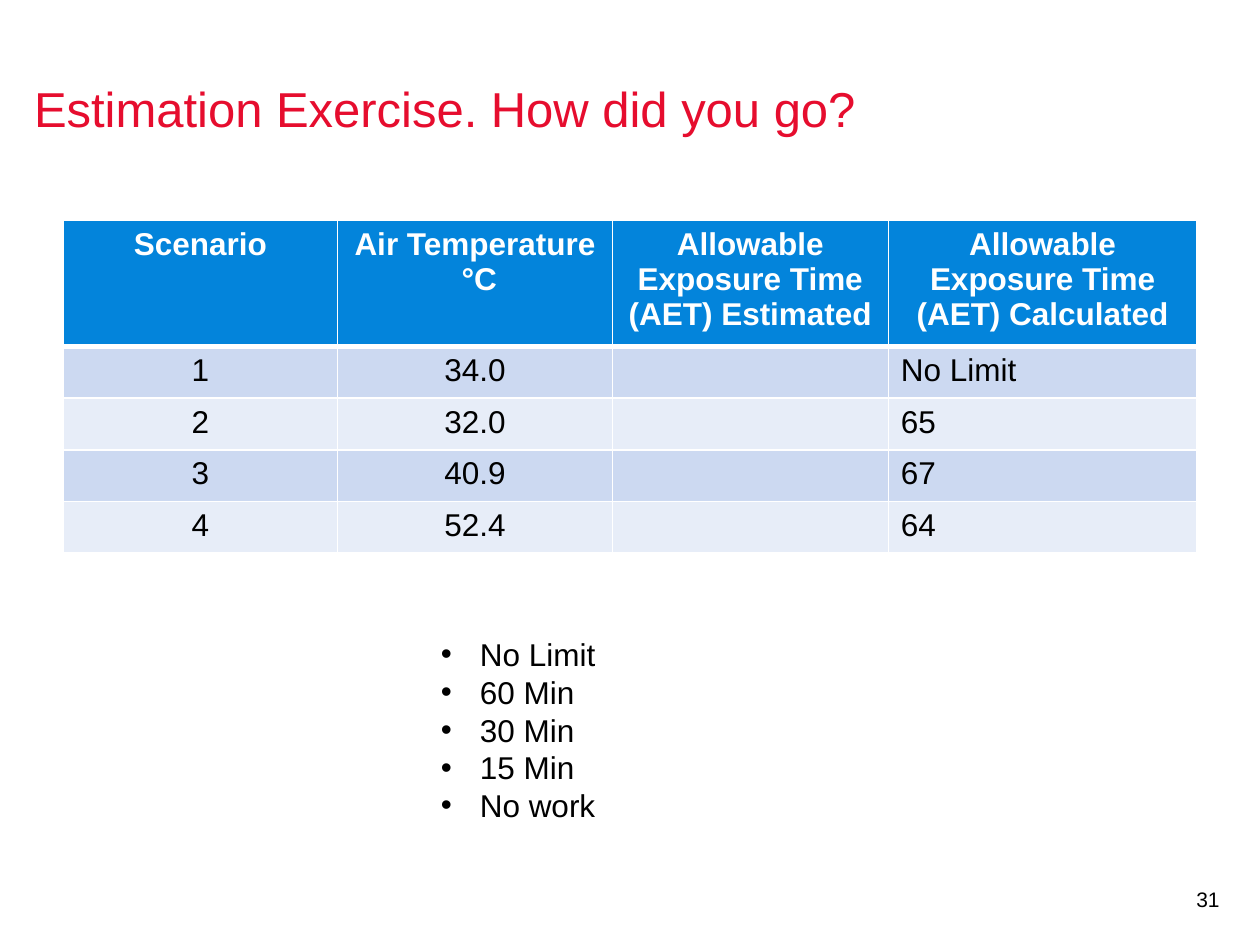
import pptx
import pptx.util
import pptx.dml.color
import pptx.enum.text
import pptx.oxml
import pptx.oxml.ns
import lxml.etree

Inches = pptx.util.Inches
Pt = pptx.util.Pt
RGBColor = pptx.dml.color.RGBColor
ALIGN = pptx.enum.text.PP_ALIGN
MIDDLE = pptx.enum.text.MSO_ANCHOR.MIDDLE
qn = pptx.oxml.ns.qn

RED = RGBColor(0xE6, 0x0D, 0x2E)
BLUE = RGBColor(0x03, 0x84, 0xDB)
BANDS = RGBColor(0xE7, 0xED, 0xF8), RGBColor(0xCC, 0xD9, 0xF1)
WHITE = RGBColor(0xFF, 0xFF, 0xFF)
BLACK = RGBColor(0, 0, 0)

TITLE = "Estimation Exercise. How did you go?"
ROWS = [
    ("Scenario", "Air Temperature  °C",
     "Allowable Exposure Time (AET) Estimated ",
     "Allowable Exposure Time (AET) Calculated"),
    ("1", "34.0", "", "No Limit"),
    ("2", "32.0", "", "65"),
    ("3", "40.9", "", "67"),
    ("4", "52.4", "", "64"),
]
COLUMN_WIDTHS = (2.18, 2.18, 2.19, 2.45)
ROW_HEIGHT = 0.41
LIMITS = ["No Limit", "60 Min", "30 Min", "15 Min", "No work"]
PAGE_NUMBER = "31"
BULLET_INDENT = Inches(0.31)


def style(para, size, color, align=ALIGN.LEFT, bold=False):
    para.alignment = align
    for font in [para.font] + [span.font for span in para.runs]:
        font.name, font.size, font.bold = "Arial", Pt(size), bold
        font.color.rgb = color


def add_text(page, place, lines, size, color, align=ALIGN.LEFT, margins=None):
    box = page.shapes.add_textbox(*map(Inches, place))
    frame = box.text_frame
    frame.word_wrap = True
    frame.text = "\n".join(lines)
    if margins:
        frame.vertical_anchor = MIDDLE
        (frame.margin_left, frame.margin_top,
         frame.margin_right, frame.margin_bottom) = map(Inches, margins)
    for para in frame.paragraphs:
        style(para, size, color, align)
    return frame


def add_bullet(para):
    properties = para._p.get_or_add_pPr()
    properties.set("marL", str(BULLET_INDENT))
    properties.set("indent", str(-BULLET_INDENT))
    font = lxml.etree.SubElement(properties, qn("a:buFont"))
    font.set("typeface", "Arial")
    lxml.etree.SubElement(properties, qn("a:buChar")).set("char", "•")
    defaults = properties.find(qn("a:defRPr"))
    if defaults is not None:
        properties.append(defaults)


def add_borders(cell, bottom):
    properties = cell._tc.get_or_add_tcPr()
    sides = (("lnL", 1), ("lnR", 1), ("lnT", 1), ("lnB", bottom))
    for position, (side, width) in enumerate(sides):
        line = lxml.etree.Element(qn("a:" + side), w=str(Pt(width)))
        fill = lxml.etree.SubElement(line, qn("a:solidFill"))
        lxml.etree.SubElement(fill, qn("a:srgbClr")).set("val", str(WHITE))
        properties.insert(position, line)


def add_table(page):
    table = page.shapes.add_table(
        len(ROWS), len(COLUMN_WIDTHS), Inches(0.5), Inches(1.75),
        Inches(sum(COLUMN_WIDTHS)), Inches(ROW_HEIGHT * len(ROWS))).table
    for column, width in zip(table.columns, COLUMN_WIDTHS):
        column.width = Inches(width)
    for r, texts in enumerate(ROWS):
        table.rows[r].height = Inches(ROW_HEIGHT)
        header = r == 0
        for c, text in enumerate(texts):
            cell = table.cell(r, c)
            cell.text = text
            cell.fill.solid()
            cell.fill.fore_color.rgb = BLUE if header else BANDS[r % 2]
            centred = header or c < len(texts) - 1
            style(cell.text_frame.paragraphs[0], 18,
                  WHITE if header else BLACK,
                  ALIGN.CENTER if centred else ALIGN.LEFT, header)
            add_borders(cell, 3 if header else 1)


def main():
    deck = pptx.Presentation()
    deck.slide_width, deck.slide_height = Inches(10), Inches(7.5)
    page = deck.slides.add_slide(deck.slide_layouts[6])
    title = add_text(page, (0.27, 0.26, 9.45, 1.26), [TITLE], 28, RED,
                     margins=(0, 0.05, 0.1, 0.05))
    title.paragraphs[0].line_spacing = 0.9
    add_table(page)
    add_text(page, (9.25, 6.94, 0.43, 0.4), [PAGE_NUMBER], 12, BLACK,
             ALIGN.RIGHT, (0, 0, 0, 0))
    limits = add_text(page, (3.4, 4.99, 2.44, 1.92), LIMITS, 18, BLACK)
    for para in limits.paragraphs:
        add_bullet(para)
    deck.save("out.pptx")


if __name__ == "__main__":
    main()
